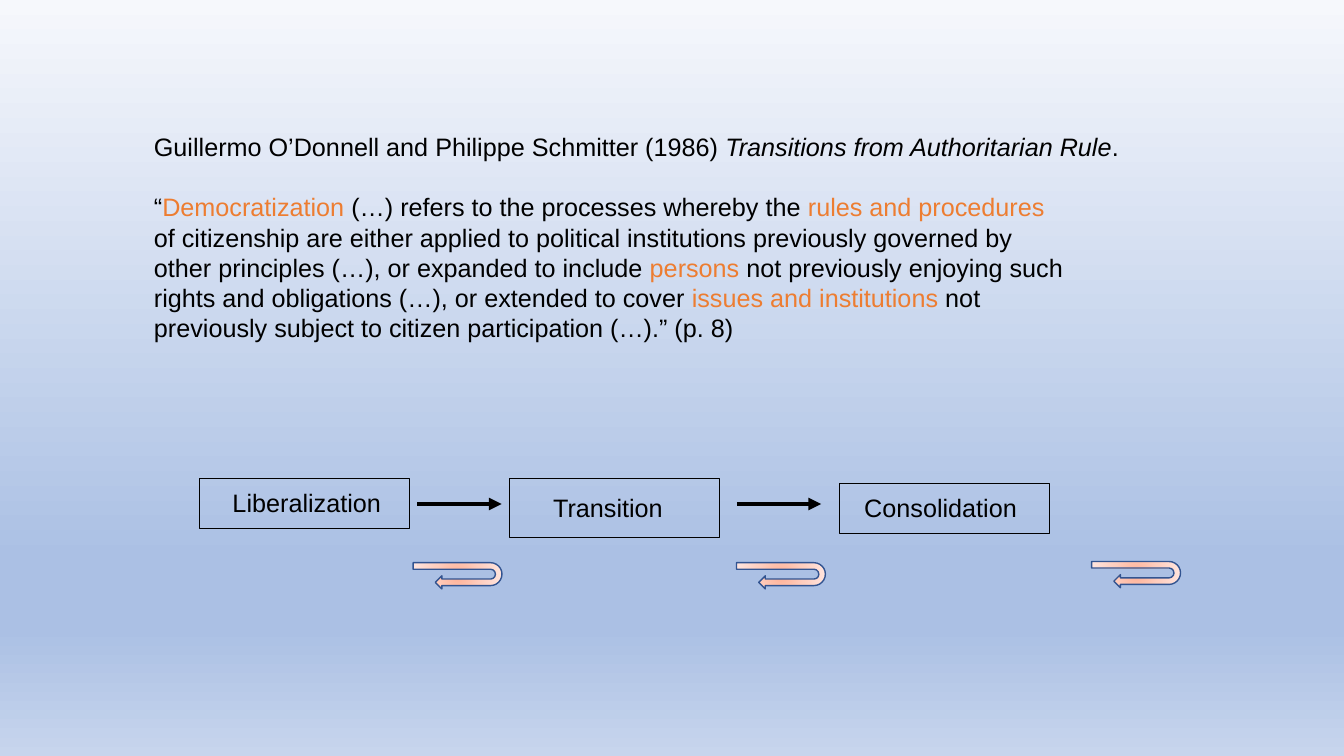
"""Builds the slide on democratization and its three stages."""
from dataclasses import dataclass

from lxml.etree import SubElement
from pptx import Presentation
from pptx.dml.color import RGBColor
from pptx.enum.shapes import MSO_CONNECTOR as Connector, MSO_SHAPE as Shape
from pptx.enum.text import MSO_AUTO_SIZE as AutoSize
from pptx.oxml.ns import qn
from pptx.util import Cm, Pt

QUOTE = [
    [("Guillermo O’Donnell and Philippe Schmitter (1986) ", ""),
     ("Transitions from Authoritarian Rule", "italic"), (".", "")],
    [("“", ""), ("Democratization", "accent"),
     (" (…) refers to the processes whereby the ", ""), ("rules and procedures", "accent")],
    [("of citizenship are either applied to political institutions previously governed by", "")],
    [("other principles (…), or expanded to include ", ""), ("persons ", "accent"),
     ("not previously enjoying such", "")],
    [("rights and obligations (…), or extended to cover ", ""),
     ("issues and institutions", "accent"), (" not", "")],
    [("previously subject to citizen participation (…).” (p. 8)", "")],
]
QUOTE_BOX = (3.63, 3.18, 25, 5.64)
STAGES = [
    ("Liberalization", (5.03, 12.06, 5.28, 1.27), (5.61, 12.15, 4.4, 1.02)),
    ("Transition", (12.85, 12.06, 5.28, 1.48), (13.69, 12.27, 3.4, 1.02)),
    ("Consolidation", (21.16, 12.18, 5.28, 1.27), (21.53, 12.27, 4.5, 1.02)),
]
ARROW_STARTS, ARROW_LENGTH, ARROW_Y = (10.52, 18.57), 2.12, 12.7
SETBACKS = [(11.2, 13.39), (19.35, 13.39), (28.3, 13.36)]
SETBACK_SIZE = (0.66, 2.24)


@dataclass(frozen=True)
class Theme:
    font: str = "Arial"
    size: int = 18
    gap: float = 21.6
    text: str = "000000"
    accent: str = "ED7D31"
    setback_line: str = "325491"
    setback: tuple = ((0, "FFB297"), (50, "FFCEBF"), (100, "FFE6E0"))
    background: tuple = ((0, "F6F8FC"), (74, "ABC0E4"), (83, "ABC0E4"), (100, "C7D5ED"))


THEME = Theme()


def set_gradient(fill, element, stops, radial=False):
    fill.gradient()
    gradient = element.find(".//" + qn("a:gradFill"))
    for child in list(gradient):
        gradient.remove(child)
    stop_list = SubElement(gradient, qn("a:gsLst"))
    for position, color in stops:
        stop = SubElement(stop_list, qn("a:gs"), pos=str(position * 1000))
        SubElement(stop, qn("a:srgbClr"), val=color)
    if radial:
        circle = SubElement(gradient, qn("a:path"), path="circle")
        SubElement(circle, qn("a:fillToRect"), dict.fromkeys("ltrb", "50000"))
    else:
        SubElement(gradient, qn("a:lin"), ang="5400000", scaled="0")


def set_line(line, color, width):
    line.color.rgb = RGBColor.from_string(color)
    line.width = Pt(width)


def add_text(slide, paragraphs, box, wrap=True, gap_before=None):
    frame = slide.shapes.add_textbox(*map(Cm, box)).text_frame
    frame.word_wrap = wrap
    frame.auto_size = AutoSize.SHAPE_TO_FIT_TEXT
    for index, runs in enumerate(paragraphs):
        paragraph = frame.add_paragraph() if index else frame.paragraphs[0]
        if index == gap_before:
            paragraph.space_before = Pt(THEME.gap)
        for text, style in runs:
            run = paragraph.add_run()
            run.text = text
            run.font.name, run.font.size = THEME.font, Pt(THEME.size)
            run.font.italic = style == "italic"
            color = THEME.accent if style == "accent" else THEME.text
            run.font.color.rgb = RGBColor.from_string(color)


def add_stage(slide, name, frame, label):
    shape = slide.shapes.add_shape(Shape.RECTANGLE, *map(Cm, frame))
    shape.shadow.inherit = False
    shape.fill.background()
    set_line(shape.line, THEME.text, 0.75)
    add_text(slide, [[(name, "")]], label)


def add_arrow(slide, start):
    ends = map(Cm, (start, ARROW_Y, start + ARROW_LENGTH, ARROW_Y))
    arrow = slide.shapes.add_connector(Connector.STRAIGHT, *ends)
    set_line(arrow.line, THEME.text, 3)
    SubElement(arrow.element.spPr.find(qn("a:ln")), qn("a:tailEnd"), type="triangle")
    SubElement(arrow.element.spPr, qn("a:effectLst"))


def add_setback(slide, position):
    shape = slide.shapes.add_shape(Shape.U_TURN_ARROW, *map(Cm, position + SETBACK_SIZE))
    shape.rotation = 90
    shape.shadow.inherit = False
    set_gradient(shape.fill, shape.element, THEME.setback, radial=True)
    set_line(shape.line, THEME.setback_line, 1)


def main():
    presentation = Presentation()
    presentation.slide_width, presentation.slide_height = Cm(33.87), Cm(19.05)
    slide = presentation.slides.add_slide(presentation.slide_layouts[6])
    set_gradient(slide.background.fill, slide.element, THEME.background)
    add_text(slide, QUOTE, QUOTE_BOX, gap_before=1)
    for stage in STAGES:
        add_stage(slide, *stage)
    for start in ARROW_STARTS:
        add_arrow(slide, start)
    for position in SETBACKS:
        add_setback(slide, position)
    presentation.save("out.pptx")


if __name__ == "__main__":
    main()
